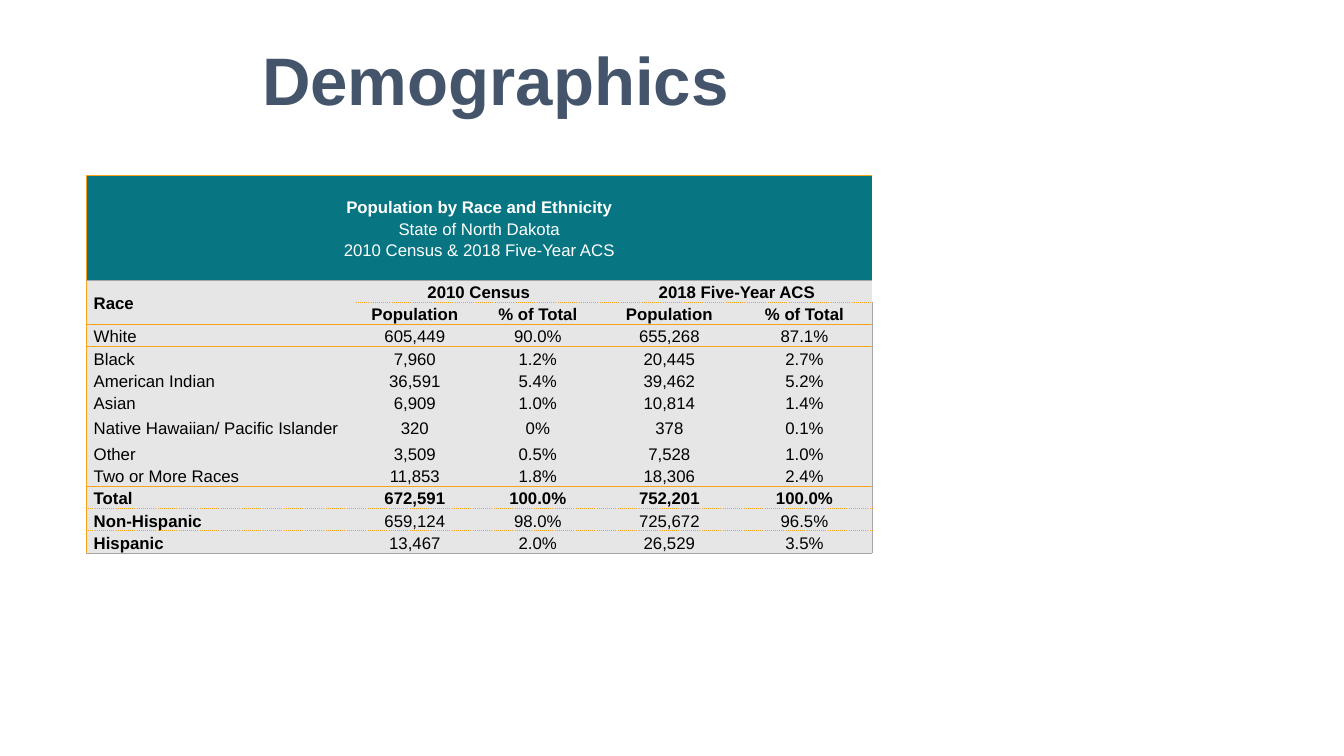
from dataclasses import dataclass

from lxml import etree
from pptx import Presentation
from pptx import util as u
from pptx.dml.color import RGBColor
from pptx.enum import text
from pptx.oxml import ns


@dataclass(frozen=True)
class Theme:
    font: str = "Arial"
    title: str = "44546A"
    teal: str = "087582"
    grey: str = "E7E6E6"
    edge: str = "A6A6A6"
    gold: str = "FAA21A"
    white: str = "FFFFFF"
    black: str = "000000"
    head_size: int = 48
    cell_size: int = 12


THEME = Theme()
NO_STYLE = "{2D5ABB26-0587-4C30-8999-92F81FD0307C}"

# Border kinds: colour, width in points, dash
SOLID = (THEME.gold, 1, "solid")
THICK = (THEME.gold, 1.5, "solid")
DOTS = (THEME.gold, 1, "sysDot")
THIN = (THEME.edge, 0.5, "solid")

WIDTHS = [2.67, 1.17, 1.27, 1.34, 1.34]
BANNER = ["Population by Race and Ethnicity", "State of North Dakota",
          "2010 Census & 2018 Five-Year ACS"]
HEADS = [
    ["Race", "2010 Census", "", "2018 Five-Year ACS", ""],
    ["", "Population", "% of Total", "Population", "% of Total"],
]
RACES = [
    ["White", "605,449", "90.0%", "655,268", "87.1%"],
    ["Black", "7,960", "1.2%", "20,445", "2.7%"],
    ["American Indian", "36,591", "5.4%", "39,462", "5.2%"],
    ["Asian", "6,909", "1.0%", "10,814", "1.4%"],
    ["Native Hawaiian/ Pacific Islander", "320", "0%", "378", "0.1%"],
    ["Other", "3,509", "0.5%", "7,528", "1.0%"],
    ["Two or More Races", "11,853", "1.8%", "18,306", "2.4%"],
]
TOTAL = ["Total", "672,591", "100.0%", "752,201", "100.0%"]
ETHNIC = [
    ["Non-Hispanic", "659,124", "98.0%", "725,672", "96.5%"],
    ["Hispanic", "13,467", "2.0%", "26,529", "3.5%"],
]
ROWS = [[""] * 5, *HEADS, *RACES, TOTAL, *ETHNIC]
TOTAL_ROW = ROWS.index(TOTAL)
TALL_ROW = 7

# Rule under each row, by row number
RULES = {0: THIN, 1: DOTS, 2: SOLID, TOTAL_ROW - 1: THICK,
         TOTAL_ROW: DOTS, len(ROWS) - 1: THIN}


def add_run(para, words, size, color, bold):
    run = para.add_run()
    run.text = words
    font = run.font
    font.name, font.size, font.bold = THEME.font, u.Pt(size), bold
    font.color.rgb = RGBColor.from_string(color)


def add_title(slide, words):
    title = slide.shapes.title
    title.left, title.top = u.Inches(0.28), u.Inches(0.33)
    title.width, title.height = u.Inches(9.27), u.Inches(0.9)
    frame = title.text_frame
    frame.vertical_anchor = text.MSO_ANCHOR.MIDDLE
    para = frame.paragraphs[0]
    para.alignment = text.PP_ALIGN.CENTER
    add_run(para, words, THEME.head_size, THEME.title, True)


def set_edge(cell, side, kind):
    color, width, dash = kind
    props = cell._tc.get_or_add_tcPr()
    line = etree.SubElement(props, ns.qn("a:ln" + side), w=str(u.Pt(width)))
    fill = etree.SubElement(line, ns.qn("a:solidFill"))
    etree.SubElement(fill, ns.qn("a:srgbClr"), val=color)
    etree.SubElement(line, ns.qn("a:prstDash"), val=dash)


def set_edges(cell, row, col):
    if col == 0:
        set_edge(cell, "L", SOLID)
    if col == len(WIDTHS) - 1:
        set_edge(cell, "R", THIN)
    above = SOLID if row == 0 else RULES.get(row - 1)
    below = RULES.get(row)
    if (row, col) == (1, 0):  # Race spans both heading rows
        below = None
    if (row, col) == (2, 0):
        above = None
    if above:
        set_edge(cell, "T", above)
    if below:
        set_edge(cell, "B", below)


def fill_cell(cell, lines, color, bolds, align, back):
    cell.margin_left = cell.margin_right = u.Inches(0.07)
    cell.margin_top = cell.margin_bottom = 0
    cell.vertical_anchor = text.MSO_ANCHOR.MIDDLE
    cell.fill.solid()
    cell.fill.fore_color.rgb = RGBColor.from_string(back)
    frame = cell.text_frame
    for num, (words, bold) in enumerate(zip(lines, bolds)):
        para = frame.add_paragraph() if num else frame.paragraphs[0]
        para.alignment, para.line_spacing = align, 1.15
        para.font.size = u.Pt(THEME.cell_size)
        if words:
            add_run(para, words, THEME.cell_size, color, bold)


def add_grid(slide):
    frame = slide.shapes.add_table(
        len(ROWS), len(WIDTHS), u.Inches(0.86), u.Inches(1.74),
        u.Inches(sum(WIDTHS)), u.Inches(3.8))
    table = frame.table
    table.first_row = table.horz_banding = False
    table._tbl.tblPr.find(ns.qn("a:tableStyleId")).text = NO_STYLE
    for col, width in enumerate(WIDTHS):
        table.columns[col].width = u.Inches(width)
    for row in range(len(ROWS)):
        high = {0: 1.04, TALL_ROW: 0.29}.get(row, 0.22)
        table.rows[row].height = u.Inches(high)

    # Cells
    for row, values in enumerate(ROWS):
        for col, words in enumerate(values):
            cell = table.cell(row, col)
            set_edges(cell, row, col)
            if row == 0:
                lines = BANNER if col == 0 else [""]
                fill_cell(cell, lines, THEME.white, [True, False, False],
                          text.PP_ALIGN.CENTER, THEME.teal)
                continue
            bold = (row <= len(HEADS) or row == TOTAL_ROW
                    or (row > TOTAL_ROW and col == 0))
            align = text.PP_ALIGN.CENTER if col else text.PP_ALIGN.LEFT
            fill_cell(cell, [words], THEME.black, [bold], align, THEME.grey)

    # Spans
    for first, last in [((0, 0), (0, 4)), ((1, 0), (2, 0)),
                        ((1, 1), (1, 2)), ((1, 3), (1, 4))]:
        table.cell(*first).merge(table.cell(*last))


def main():
    deck = Presentation()
    deck.slide_width, deck.slide_height = u.Inches(13.33), u.Inches(7.5)
    slide = deck.slides.add_slide(deck.slide_layouts[5])
    add_title(slide, "Demographics")
    add_grid(slide)
    deck.save("out.pptx")


if __name__ == "__main__":
    main()
